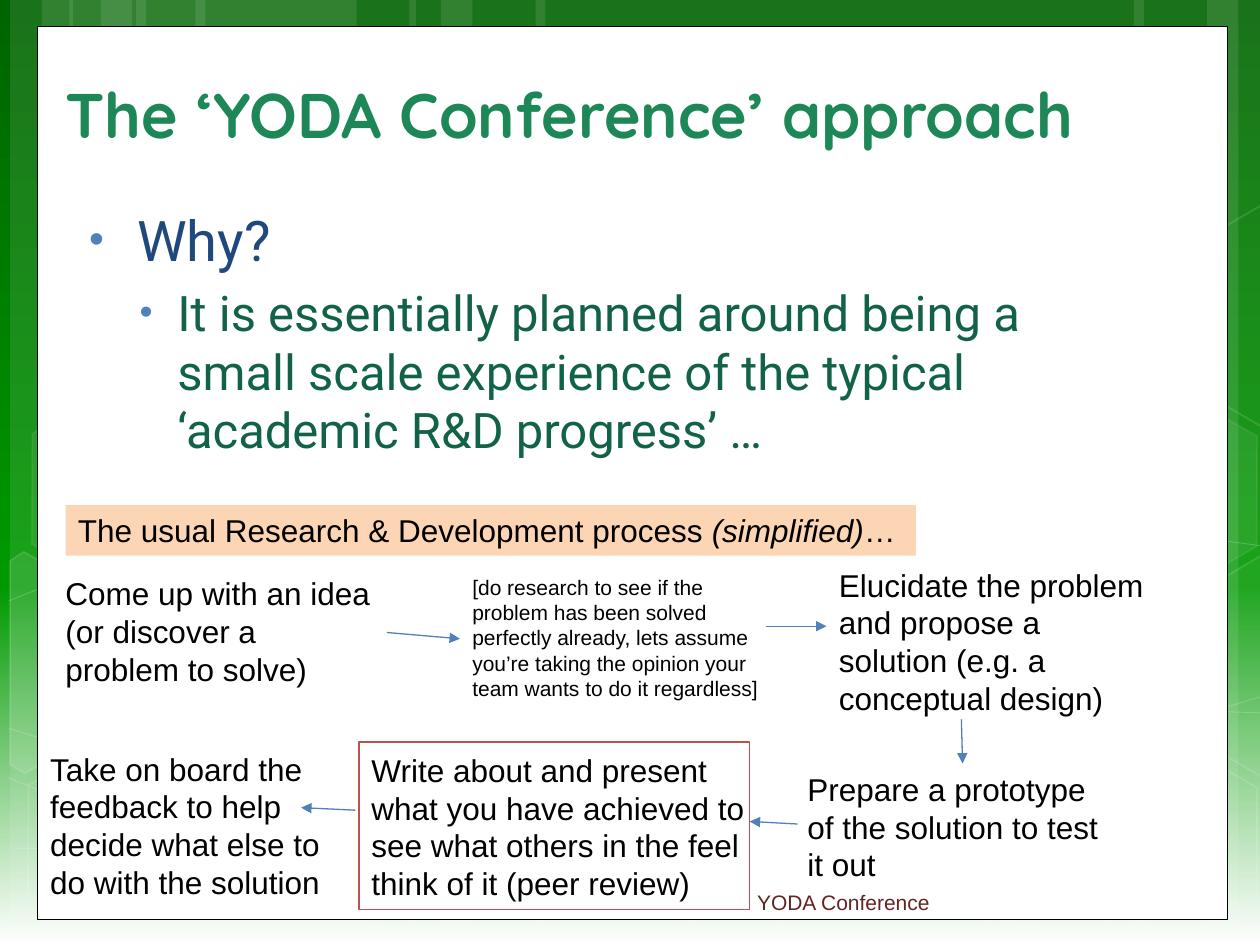
from dataclasses import dataclass

from lxml import etree
from pptx import Presentation
from pptx.dml.color import RGBColor
from pptx.enum.shapes import MSO_CONNECTOR, MSO_SHAPE
from pptx.enum.text import MSO_ANCHOR, PP_ALIGN
from pptx.oxml.ns import qn
from pptx.util import Inches, Pt

RECT, HEXAGON = MSO_SHAPE.RECTANGLE, MSO_SHAPE.HEXAGON
STRAIGHT = MSO_CONNECTOR.STRAIGHT
TOP, BOTTOM, LEFT = MSO_ANCHOR.TOP, MSO_ANCHOR.BOTTOM, PP_ALIGN.LEFT


@dataclass(frozen=True)
class Theme:
    white: str = "FFFFFF"
    black: str = "000000"
    title: str = "1D8757"
    heading: str = "1F497D"
    detail: str = "126249"
    accent: str = "4F81BD"
    banner: str = "FCD5B5"
    frame: str = "C0504D"
    footer: str = "632523"
    title_font: str = "Quicksand"
    body_font: str = "Roboto"
    font: str = "Arial"
    title_size: int = 36
    heading_size: int = 32
    detail_size: int = 28
    step_size: int = 18
    small_size: int = 12
    backdrop: tuple = ((0, "006400"), (62, "009900"), (100, "FFFFFF"))


T = Theme()

BANDS = [(1.08, 1.75), (0.08, 0.5), (0.33, 0.83), (1.55, 1.75), (0.55, 0.5),
         (0.8, 0.83), (7.33, 1.75), (9.58, 0.5), (9, 0.83), (4.25, 3.08),
         (3.25, 0.5), (3.5, 0.83)]
WAVES = [
    [(0.07, 6.73), (1.9, 6.78), (4.58, 6.65), (7.92, 6.17), (10.07, 5.51)],
    [(0.07, 4.77), (1.21, 4.31), (3.47, 3.87), (6.54, 3.87), (10.07, 4.34)],
    [(0.06, 6.17), (3.34, 7.49)],
    [(0.07, 5.78), (1.28, 6.16), (3.57, 6.73), (6.28, 7.18), (8.53, 7.36), (10.07, 7.34)],
    [(2.42, 7.49), (3.02, 6.91), (3.88, 6.39), (4.7, 6.09), (6.8, 5.69), (8.86, 5.62),
     (10.06, 5.66)],
]
HEXAGONS = [(4.97, 5.89, 6, 12), (0.11, 5.91, 0, 12), (0.14, 3.12, 7, 8),
            (1.74, 5.92, 0, 12), (8.34, 5.93, 0, 12), (8.34, 3.14, 7, 8)]
CUT_HEXAGONS = [
    ([(0.08, 4.45), (0.19, 4.38), (0.96, 4.82), (0.95, 5.7), (0.2, 6.14), (0.08, 6.07)], 10),
    ([(9.26, 4.85), (10.01, 4.41), (10.09, 4.46), (10.09, 6.13), (10.02, 6.17), (9.26, 5.73)], 4),
    ([(9.26, 2.07), (10.01, 1.63), (10.1, 1.68), (10.09, 3.35), (10.02, 3.39), (9.26, 2.95)], 0),
]
STEPS = [
    ((0.42, 4.51, 2.65, 1.01), "Come up with an idea (or discover a problem to solve)", T.step_size),
    ((3.65, 4.51, 2.65, 1.11), "[do research to see if the problem has been solved perfectly "
     "already, lets assume you’re taking the opinion your team wants to do it regardless]",
     T.small_size),
    ((6.56, 4.44, 2.65, 1.31), "Elucidate the problem and propose a solution "
     "(e.g. a conceptual design)", T.step_size),
    ((6.31, 6.06, 2.65, 1.01), "Prepare a prototype of the solution to test it out", T.step_size),
    ((2.85, 5.91, 3.27, 1.31), "Write about and present what you have achieved to see what "
     "others in the feel think of it (peer review)", T.step_size),
    ((0.3, 5.9, 2.42, 1.31), "Take on board the feedback to help decide what else to do "
     "with the solution", T.step_size),
]
ARROWS = [(3.07, 5.02, 3.65, 5.07), (6.08, 4.97, 6.56, 4.97), (7.63, 5.71, 7.64, 6.06),
          (6.33, 6.54, 5.95, 6.52), (2.82, 6.43, 2.39, 6.41)]


def rgb(color):
    return RGBColor.from_string(color)


def inches(values):
    return [Inches(v) for v in values]


def set_alpha(sp, route, percent):
    clr = sp.element.spPr.find("/".join(qn(tag) for tag in route))
    etree.SubElement(clr, qn("a:alpha"), val=str(percent * 1000))


def style(sp, fill=None, line=None, width=1, fill_alpha=100, line_alpha=100):
    sp.shadow.inherit = False
    if fill and fill_alpha:
        sp.fill.solid()
        sp.fill.fore_color.rgb = rgb(fill)
        if fill_alpha < 100:
            set_alpha(sp, ("a:solidFill", "a:srgbClr"), fill_alpha)
    else:
        sp.fill.background()
    if line:
        sp.line.color.rgb = rgb(line)
        sp.line.width = Pt(width)
        if line_alpha < 100:
            set_alpha(sp, ("a:ln", "a:solidFill", "a:srgbClr"), line_alpha)
    else:
        sp.line.fill.background()


def add_shape(s, kind, box, **look):
    sp = s.shapes.add_shape(kind, *inches(box))
    style(sp, **look)
    return sp


def add_outline(s, points, close, **look):
    fb = s.shapes.build_freeform(*inches(points[0]), scale=1.0)
    fb.add_line_segments([inches(pt) for pt in points[1:]], close=close)
    style(fb.convert_to_shape(), **look)


def add_run(p, text, size, color, font=T.font, bold=False, italic=False):
    r = p.add_run()
    r.text = text
    f = r.font
    f.name, f.size, f.bold, f.italic = font, Pt(size), bold, italic
    f.color.rgb = rgb(color)


def add_text(s, box, wrap=True):
    tf = s.shapes.add_textbox(*inches(box)).text_frame
    tf.word_wrap = wrap
    return tf


def add_bullet(p, text, size, color, margin, indent):
    p.space_before = Pt(size * 0.2)
    pPr = p._p.get_or_add_pPr()
    pPr.set("marL", str(Inches(margin)))
    pPr.set("indent", str(Inches(indent)))
    clr = etree.SubElement(pPr, qn("a:buClr"))
    etree.SubElement(clr, qn("a:srgbClr"), val=T.accent)
    etree.SubElement(pPr, qn("a:buSzPct"), val="76000")
    etree.SubElement(pPr, qn("a:buFont"), typeface=T.font)
    etree.SubElement(pPr, qn("a:buChar"), char="•")
    add_run(p, text, size, color, T.body_font)


def add_arrow(s, ends):
    c = s.shapes.add_connector(STRAIGHT, *inches(ends))
    c.line.color.rgb = rgb(T.accent)
    c.line.width = Pt(0.75)
    etree.SubElement(c.line._get_or_add_ln(), qn("a:tailEnd"), type="triangle")
    etree.SubElement(c.element.spPr, qn("a:effectLst"))


def add_backdrop(s):
    fill = s.background.fill
    fill.gradient()
    fill.gradient_angle = 270
    stops = s.element.find(".//" + qn("a:gsLst"))
    for gs in list(stops):
        stops.remove(gs)
    for pos, color in T.backdrop:
        gs = etree.SubElement(stops, qn("a:gs"), pos=str(pos * 1000))
        etree.SubElement(gs, qn("a:srgbClr"), val=color)
    for x, w in BANDS:
        add_shape(s, RECT, (x, 0, w, 7.5), fill=T.white, fill_alpha=10)
    for points in WAVES:
        add_outline(s, points, False, line=T.white, width=0.5, line_alpha=20)
    for x, y, fill_alpha, line_alpha in HEXAGONS:
        sp = add_shape(s, HEXAGON, (x, y, 1.75, 1.52), fill=T.white, line=T.white,
                       fill_alpha=fill_alpha, line_alpha=line_alpha)
        sp.adjustments[0] = 0.285
        sp.rotation = 30
    for points, alpha in CUT_HEXAGONS:
        add_outline(s, points, True, fill=T.white, line=T.white, fill_alpha=alpha, line_alpha=12)
    add_shape(s, RECT, (0.3, 0.21, 9.44, 7.09), fill=T.white, line=T.black, width=0.5)


def add_title(s, text):
    title = s.shapes.title
    title.element.getparent().append(title.element)
    title.left, title.top, title.width, title.height = inches((0.42, 0.49, 8.8, 0.76))
    tf = title.text_frame
    tf.vertical_anchor = BOTTOM
    p = tf.paragraphs[0]
    p.alignment = LEFT
    add_run(p, text, T.title_size, T.title, T.title_font, bold=True)


def add_body(s):
    tf = add_text(s, (0.61, 1.58, 8.42, 4.94))
    add_bullet(tf.paragraphs[0], "Why?", T.heading_size, T.heading, 0.38, -0.4)
    p = tf.add_paragraph()
    p.level = 1
    add_bullet(p, "It is essentially planned around being a small scale experience of the "
               "typical ‘academic R&D progress’ …", T.detail_size, T.detail, 0.7, -0.3)


def add_banner(s):
    tf = add_shape(s, RECT, (0.52, 4.01, 6.75, 0.4), fill=T.banner).text_frame
    tf.vertical_anchor = TOP
    p = tf.paragraphs[0]
    p.alignment = LEFT
    add_run(p, "The usual Research & Development process ", T.step_size, T.black)
    add_run(p, "(simplified)", T.step_size, T.black, italic=True)
    add_run(p, "…", T.step_size, T.black)


def main():
    prs = Presentation()
    prs.slide_width, prs.slide_height = Inches(10), Inches(7.5)
    s = prs.slides.add_slide(prs.slide_layouts[5])
    add_backdrop(s)
    add_title(s, "The ‘YODA Conference’ approach")
    add_body(s)
    add_banner(s)
    for box, text, size in STEPS:
        add_run(add_text(s, box).paragraphs[0], text, size, T.black)
    for ends in ARROWS:
        add_arrow(s, ends)
    add_shape(s, RECT, (2.85, 5.89, 3.1, 1.33), line=T.frame)
    tf = add_text(s, (5.91, 7.01, 1.58, 0.3), wrap=False)
    add_run(tf.paragraphs[0], "YODA Conference", T.small_size, T.footer)
    prs.save("out.pptx")


if __name__ == "__main__":
    main()
